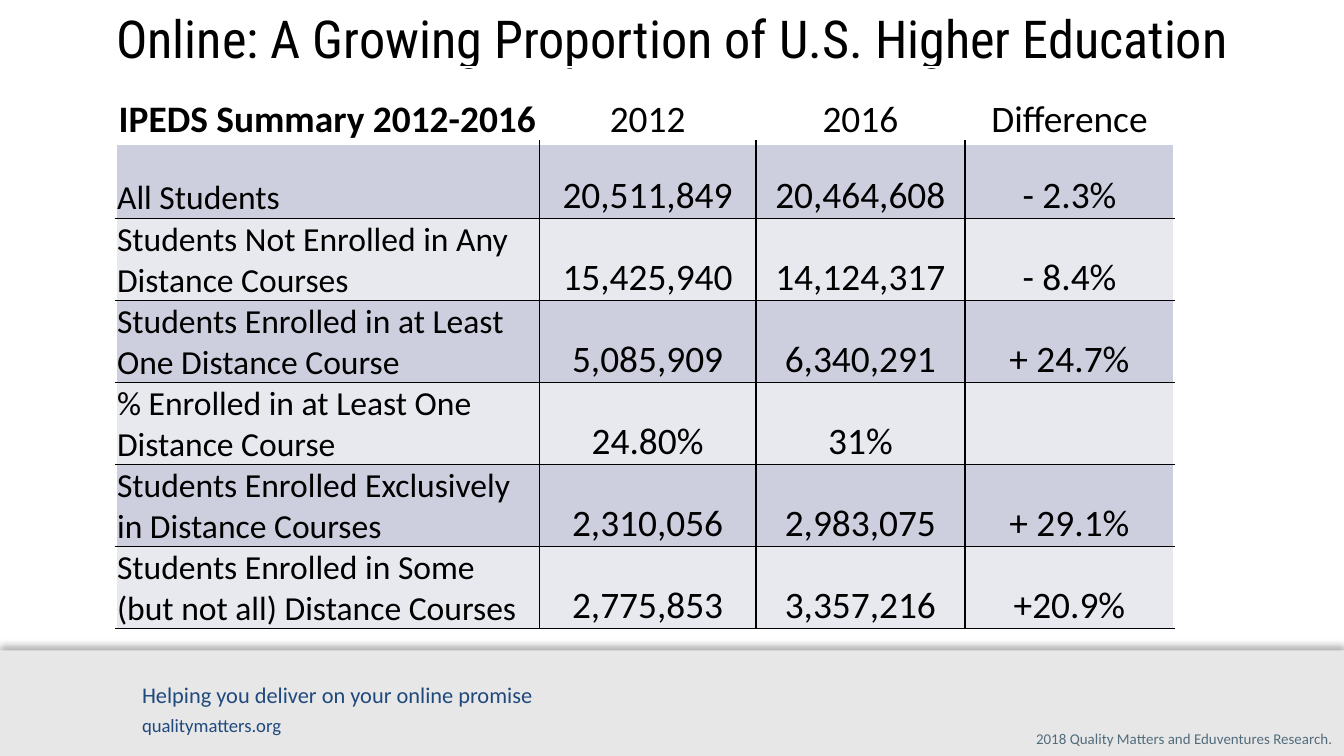
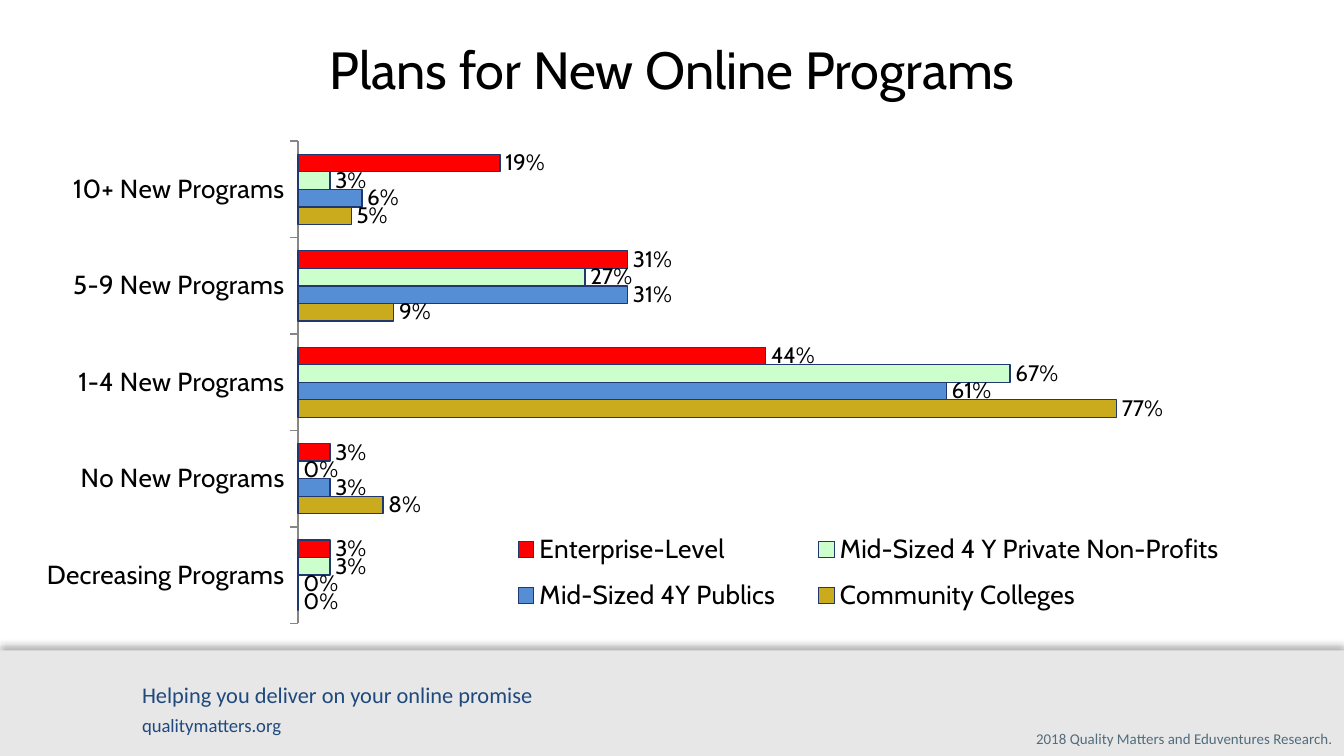
from dataclasses import dataclass
from pptx import Presentation
from pptx.chart.data import CategoryChartData
from pptx.dml.color import RGBColor as RGB
from pptx.enum.chart import XL_CHART_TYPE as CT, XL_LABEL_POSITION as LP
from pptx.enum.chart import XL_LEGEND_POSITION as LG, XL_TICK_MARK as TM
from pptx.enum.shapes import MSO_SHAPE
from pptx.enum.text import MSO_ANCHOR as MA, PP_ALIGN as PA
from pptx.oxml import parse_xml
from pptx.oxml.ns import nsdecls
from pptx.util import Pt


@dataclass(frozen=True)
class Theme:
    black: str = "000000"
    white: str = "FFFFFF"
    band: str = "E7E7E7"
    navy: str = "1F497D"
    slate: str = "526C7C"
    axis: str = "868686"
    bar_line: str = "1F3870"
    row_fills: tuple = ("CDCFDE", "E8E9EF")
    body: str = "Calibri"
    table_title: str = "Roboto Condensed"
    chart: str = "Cabin"
    title_size: int = 28
    value_size: int = 20
    row_size: int = 18
    axis_size: int = 14
    label_size: int = 12
    link_size: int = 10
    credit_size: int = 8


T = Theme()


def write(tf, text, size, color=T.black, font=T.body, bold=False,
          align=PA.LEFT, before=0, more=False):
    tf.word_wrap = True
    p = tf.add_paragraph() if more else tf.paragraphs[0]
    p.alignment = align
    if before:
        p.space_before = Pt(before)
    r = p.add_run()
    r.text = text
    r.font.size = Pt(size)
    r.font.name = font
    r.font.bold = bold
    r.font.color.rgb = RGB.from_string(color)


def chart_layout(x, y, w, h, inner=False):
    target = '<c:layoutTarget val="inner"/>' if inner else ""
    return parse_xml(
        f'<c:layout {nsdecls("c")}><c:manualLayout>{target}'
        '<c:xMode val="edge"/><c:yMode val="edge"/>'
        f'<c:x val="{x}"/><c:y val="{y}"/><c:w val="{w}"/><c:h val="{h}"/>'
        '</c:manualLayout></c:layout>')


prs = Presentation()
prs.slide_width, prs.slide_height = Pt(720), Pt(405)

titles = [
    ("Online: A Growing Proportion of U.S. Higher Education", T.table_title, 0, 0, 720, 41, MA.TOP),
    ("Plans for New Online Programs", T.chart, 36, 10, 648, 53.5, MA.MIDDLE),
]
slides = []
for title, font, x, y, w, h, anchor in titles:
    s = prs.slides.add_slide(prs.slide_layouts[6])
    slides.append(s)

    band = s.shapes.add_shape(MSO_SHAPE.RECTANGLE, 0, Pt(348.5), Pt(720), Pt(56.5))
    band.fill.solid()
    band.fill.fore_color.rgb = RGB.from_string(T.band)
    band.line.fill.background()
    band._element.spPr.append(parse_xml(
        f'<a:effectLst {nsdecls("a")}><a:outerShdw blurRad="{Pt(4)}" dist="{Pt(3)}" '
        f'dir="16200000" rotWithShape="0"><a:srgbClr val="{T.black}">'
        '<a:alpha val="30000"/></a:srgbClr></a:outerShdw></a:effectLst>'))

    tf = s.shapes.add_textbox(Pt(69), Pt(361.5), Pt(397), Pt(37)).text_frame
    write(tf, "Helping you deliver on your online promise", T.label_size, T.navy)
    write(tf, "qualitymatters.org", T.link_size, T.navy, before=3, more=True)

    tf = s.shapes.add_textbox(Pt(529), Pt(387.5), Pt(185), Pt(17)).text_frame
    tf.margin_right = 0
    write(tf, "2018 Quality Matters and Eduventures Research.", T.credit_size,
          T.slate, align=PA.RIGHT)

    tf = s.shapes.add_textbox(Pt(x), Pt(y), Pt(w), Pt(h)).text_frame
    tf.vertical_anchor = anchor
    write(tf, title, T.title_size, font=font, align=PA.CENTER)

rows = [
    ("IPEDS Summary 2012-2016", "2012", "2016", "Difference"),
    ("All Students", "20,511,849", "20,464,608", "- 2.3%"),
    ("Students Not Enrolled in Any Distance Courses", "15,425,940", "14,124,317", "- 8.4%"),
    ("Students Enrolled in at Least One Distance Course", "5,085,909", "6,340,291", "+ 24.7%"),
    ("% Enrolled in at Least One Distance Course", "24.80%", "31%", ""),
    ("Students Enrolled Exclusively in Distance Courses", "2,310,056", "2,983,075", "+ 29.1%"),
    ("Students Enrolled in Some (but not all) Distance Courses", "2,775,853", "3,357,216", "+20.9%"),
]
col_widths = [227, 116, 112, 112]
row_heights = [40.5, 40.5, 42.5, 42.5, 42.5, 42.5, 44]
table = slides[0].shapes.add_table(
    len(rows), len(col_widths), Pt(62), Pt(36),
    Pt(sum(col_widths)), Pt(sum(row_heights))).table
table.first_row = table.horz_banding = False
for col, w in zip(table.columns, col_widths):
    col.width = Pt(w)
for i, (row, h) in enumerate(zip(rows, row_heights)):
    table.rows[i].height = Pt(h)
    head = i == 0
    for j, text in enumerate(row):
        cell = table.cell(i, j)
        cell.margin_left = cell.margin_right = cell.margin_top = Pt(0.75)
        cell.margin_bottom = 0
        cell.vertical_anchor = MA.BOTTOM
        borders = [
            ("L", head or j == 0, 1),
            ("R", head or j == len(row) - 1, 1),
            ("T", i < 2, 1),
            ("B", head, 3 if head else 1),
        ]
        for side, blank, width in borders:
            color = T.white if blank else T.black
            cell._tc.get_or_add_tcPr().append(parse_xml(
                f'<a:ln{side} {nsdecls("a")} w="{Pt(width)}"><a:solidFill>'
                f'<a:srgbClr val="{color}"/></a:solidFill></a:ln{side}>'))
        if head:
            cell.fill.background()
        else:
            cell.fill.solid()
            cell.fill.fore_color.rgb = RGB.from_string(T.row_fills[(i - 1) % 2])
        if text:
            label = j == 0 and not head
            write(cell.text_frame, text, T.row_size if label else T.value_size,
                  bold=head and j == 0, align=PA.LEFT if label else PA.CENTER)

series = [
    ("Community Colleges", "CAAB1E", (0, 0.08, 0.77, 0.09, 0.05)),
    ("Mid-Sized 4Y Publics", "558ED5", (0, 0.03, 0.61, 0.31, 0.06)),
    ("Mid-Sized 4 Y Private Non-Profits", "CCFFCC", (0.03, 0, 0.67, 0.27, 0.03)),
    ("Enterprise-Level", "FF0000", (0.03, 0.03, 0.44, 0.31, 0.19)),
]
data = CategoryChartData(number_format="0%")
data.categories = ["Decreasing Programs", "No New Programs", "1-4 New Programs",
                   "5-9 New Programs", "10+ New Programs"]
for name, color, values in series:
    data.add_series(name, values)
chart = slides[1].shapes.add_chart(
    CT.BAR_CLUSTERED, Pt(12), Pt(63.5), Pt(687), Pt(283), data).chart
chart.has_title = False
chart.font.name = T.chart
chart.font.size = Pt(T.row_size)
chart.font.color.rgb = RGB.from_string(T.black)

plot = chart.plots[0]
plot.gap_width = 150
plot.vary_by_categories = False
for ser, (name, color, values) in zip(plot.series, series):
    ser.format.fill.solid()
    ser.format.fill.fore_color.rgb = RGB.from_string(color)
    ser.format.line.color.rgb = RGB.from_string(T.bar_line)
    ser.format.line.width = Pt(0.75)
    labels = ser.data_labels
    labels.show_value = True
    labels.number_format = "0%"
    labels.number_format_is_linked = False
    labels.position = LP.OUTSIDE_END
    labels.font.size = Pt(T.label_size)

cat = chart.category_axis
cat.major_tick_mark = TM.OUTSIDE
cat.tick_labels.font.size = Pt(T.axis_size)
cat.format.line.color.rgb = RGB.from_string(T.axis)
val = chart.value_axis
val.minimum_scale, val.maximum_scale = 0, 0.9
val.has_major_gridlines = False
val.visible = False

chart.has_legend = True
legend = chart.legend
legend.position = LG.RIGHT
legend.include_in_layout = False
legend.font.size = Pt(T.axis_size)
legend._element.insert(1, chart_layout(0.36, 0.76, 0.6, 0.2))
plot_area = chart._chartSpace.xpath(".//c:plotArea")[0]
plot_area.insert(0, chart_layout(0.215, 0.043, 0.746, 0.913, inner=True))

prs.save("out.pptx")
